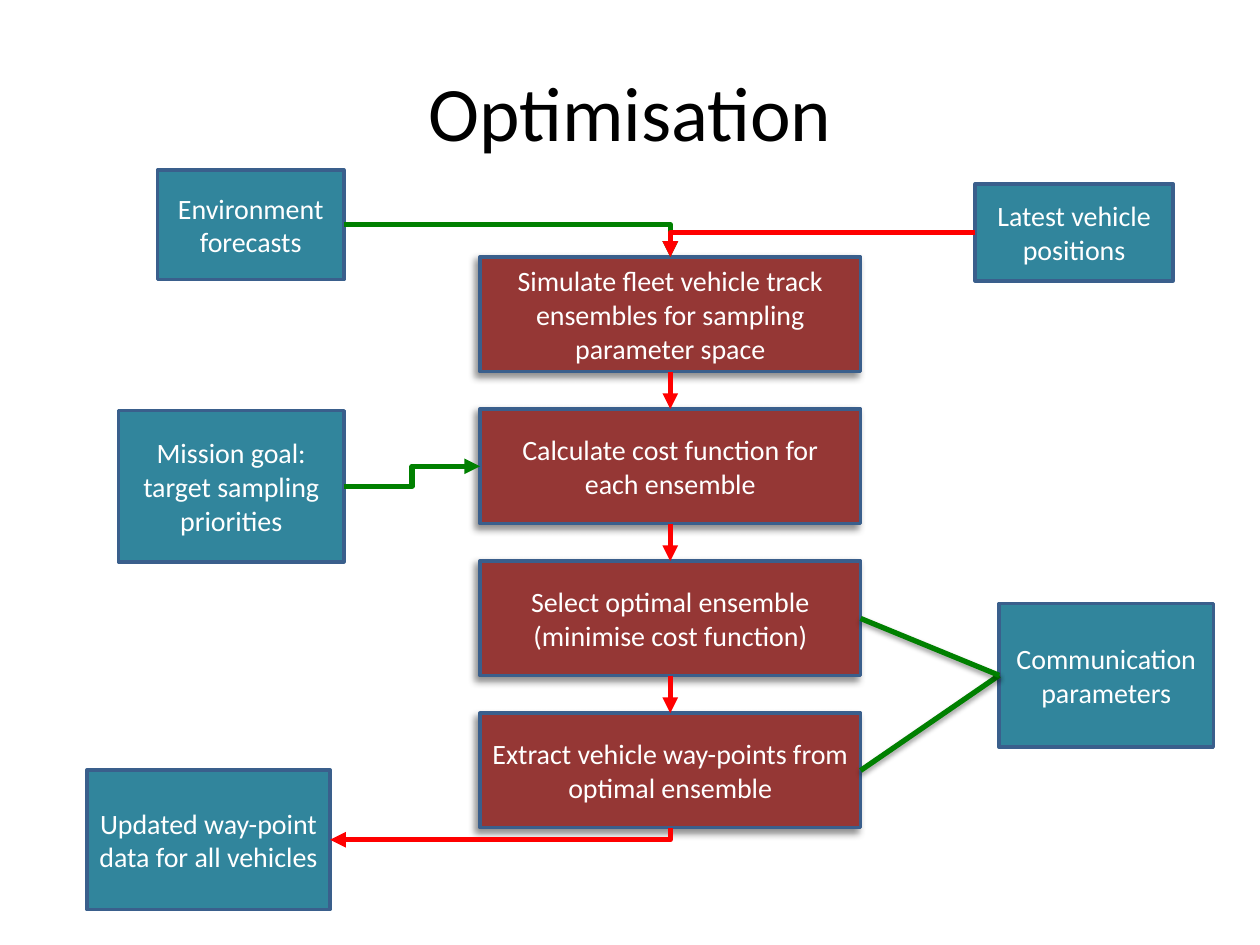
from dataclasses import dataclass

from lxml import etree
from pptx import Presentation
from pptx import util as u
from pptx.dml.color import RGBColor
from pptx.enum import shapes, text
from pptx.oxml import ns
from pptx.util import Inches


@dataclass(frozen=True)
class Theme:
    font: str = "Calibri"
    title_size: int = 44
    box_size: int = 16
    ink: str = "000000"
    box_text: str = "FFFFFF"
    step_fill: str = "953735"
    data_fill: str = "31859C"
    outline: str = "3A5F8C"
    flow: str = "FF0000"
    feed: str = "008000"
    outline_width: int = 2
    link_width: int = 3


THEME = Theme()
STEP_SHADOW = dict(blur=4, dist=3, angle=135, alpha=43)
LINK_SHADOW = dict(blur=3.1, dist=1.6, angle=90, alpha=38)
TOP, LEFT, BOTTOM, RIGHT = range(4)
STEPS = (
    "Simulate fleet vehicle track ensembles for sampling parameter space",
    "Calculate cost function for each ensemble",
    "Select optimal ensemble (minimise cost function)",
    "Extract vehicle way-points from optimal ensemble",
)


def rgb(value):
    return RGBColor.from_string(value)


def set_effects(sp, shadow=None):
    props = sp._element.spPr
    effects = props.find(ns.qn("a:effectLst"))
    if effects is None:
        effects = etree.SubElement(props, ns.qn("a:effectLst"))
    if shadow:
        outer = etree.SubElement(
            effects, ns.qn("a:outerShdw"),
            blurRad=str(u.Pt(shadow["blur"])), dist=str(u.Pt(shadow["dist"])),
            dir=str(shadow["angle"] * 60000), rotWithShape="0")
        color = etree.SubElement(outer, ns.qn("a:srgbClr"), val="000000")
        etree.SubElement(color, ns.qn("a:alpha"), val=str(shadow["alpha"] * 1000))


def style_text(p, size, color):
    p.alignment = text.PP_ALIGN.CENTER
    p.font.name = THEME.font
    p.font.size = u.Pt(size)
    p.font.color.rgb = rgb(color)


def add_title(s, label, left, top, width, height):
    sp = s.shapes.title
    sp.left, sp.top, sp.width, sp.height = map(Inches, (left, top, width, height))
    tf = sp.text_frame
    tf.text = label
    tf.vertical_anchor = text.MSO_ANCHOR.MIDDLE
    style_text(tf.paragraphs[0], THEME.title_size, THEME.ink)


def add_box(s, label, left, top, width, height, fill=THEME.data_fill, shadow=None):
    sp = s.shapes.add_shape(shapes.MSO_SHAPE.RECTANGLE,
                            *map(Inches, (left, top, width, height)))
    sp.fill.solid()
    sp.fill.fore_color.rgb = rgb(fill)
    sp.line.color.rgb = rgb(THEME.outline)
    sp.line.width = u.Pt(THEME.outline_width)
    sp.shadow.inherit = False
    set_effects(sp, shadow)
    tf = sp.text_frame
    tf.word_wrap = True
    tf.vertical_anchor = text.MSO_ANCHOR.MIDDLE
    tf.text = label
    style_text(tf.paragraphs[0], THEME.box_size, THEME.box_text)
    return sp


def add_steps(s, left, top, width, height, box_height):
    pitch = (height - box_height) / (len(STEPS) - 1)
    return [add_box(s, label, left, top + i * pitch, width, box_height,
                    THEME.step_fill, STEP_SHADOW)
            for i, label in enumerate(STEPS)]


def side(sp, index):
    mid_x, mid_y = sp.left + sp.width // 2, sp.top + sp.height // 2
    return ((mid_x, sp.top), (sp.left, mid_y),
            (mid_x, sp.top + sp.height), (sp.left + sp.width, mid_y))[index]


def add_link(s, kind, begin, end, color, arrow=True, shadow=None):
    cxn = s.shapes.add_connector(kind, *begin, *end)
    cxn.line.color.rgb = rgb(color)
    cxn.line.width = u.Pt(THEME.link_width)
    if arrow:
        ln = cxn._element.spPr.find(ns.qn("a:ln"))
        etree.SubElement(ln, ns.qn("a:tailEnd"), type="triangle")
    set_effects(cxn, shadow)
    return cxn


def join(s, source, source_side, target, target_side, color, **look):
    cxn = add_link(s, shapes.MSO_CONNECTOR.STRAIGHT, side(source, source_side),
                   side(target, target_side), color, **look)
    cxn.begin_connect(source, source_side)
    cxn.end_connect(target, target_side)


def add_corner(s, begin, end, color, vertical_first=False):
    if vertical_first:
        mid_x, mid_y = (begin[0] + end[0]) // 2, (begin[1] + end[1]) // 2
        half_w, half_h = (end[1] - begin[1]) // 2, (begin[0] - end[0]) // 2
        begin, end = (mid_x - half_w, mid_y - half_h), (mid_x + half_w, mid_y + half_h)
    cxn = add_link(s, shapes.MSO_CONNECTOR.ELBOW, begin, end, color)
    props = cxn._element.spPr
    props.find(ns.qn("a:prstGeom")).set("prst", "bentConnector2")
    if vertical_first:
        props.find(ns.qn("a:xfrm")).set("rot", str(90 * 60000))


def add_links(s, steps, forecasts, positions, goal, comms, waypoints):
    simulate, calculate, select, extract = steps
    add_corner(s, side(forecasts, RIGHT), side(simulate, TOP), THEME.feed)
    add_corner(s, side(positions, LEFT), side(simulate, TOP), THEME.flow)
    add_corner(s, side(extract, BOTTOM), side(waypoints, RIGHT), THEME.flow,
               vertical_first=True)
    add_link(s, shapes.MSO_CONNECTOR.ELBOW, side(goal, RIGHT),
             side(calculate, LEFT), THEME.feed)
    for source, target in zip(steps, steps[1:]):
        join(s, source, BOTTOM, target, TOP, THEME.flow)
    for step in (extract, select):
        join(s, comms, LEFT, step, RIGHT, THEME.feed, arrow=False, shadow=LINK_SHADOW)


def main():
    prs = Presentation()
    prs.slide_width, prs.slide_height = Inches(10), Inches(7.5)
    s = prs.slides.add_slide(prs.slide_layouts[5])
    add_title(s, "Optimisation", 0.69, 0.4, 8.62, 0.95)
    steps = add_steps(s, 3.81, 2.04, 3.02, 4.53, 0.91)
    forecasts = add_box(s, "Environment forecasts", 1.25, 1.35, 1.48, 0.87)
    positions = add_box(s, "Latest vehicle positions", 7.74, 1.46, 1.57, 0.77)
    goal = add_box(s, "Mission goal: target sampling priorities", 0.94, 3.26, 1.79, 1.2)
    comms = add_box(s, "Communication parameters", 7.93, 4.79, 1.7, 1.14)
    waypoints = add_box(s, "Updated way-point data for all vehicles", 0.69, 6.11, 1.93, 1.11)
    add_links(s, steps, forecasts, positions, goal, comms, waypoints)
    prs.save("out.pptx")


if __name__ == "__main__":
    main()
